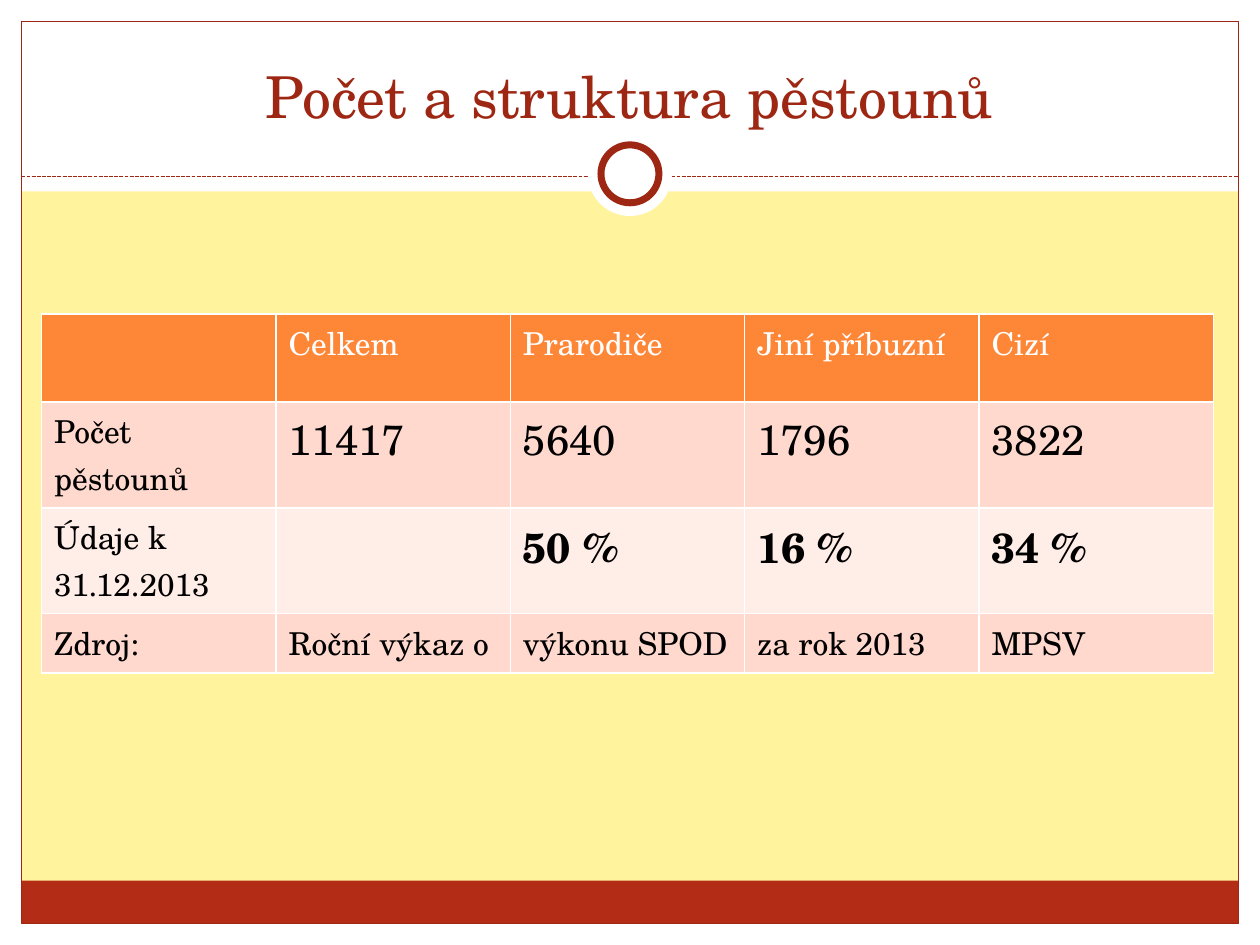
"""Build a slide with a table of foster carers by relation to the child."""
from lxml import etree
from pptx import Presentation
from pptx import util as u
from pptx.dml.color import RGBColor
from pptx.enum import dml, shapes, text
from pptx.oxml.ns import qn

FONT = "TeX Gyre Schola"
COLORS = {
    "background": "FFF39D",
    "white": "FFFFFF",
    "black": "000000",
    "footer": "B32C16",
    "accent": "9E2713",
    "header": "FE8637",
    "band_dark": "FFD9CE",
    "band_light": "FFEDE8",
}
ROWS = [
    ["", "Celkem", "Prarodiče", "Jiní příbuzní", "Cizí"],
    ["Počet pěstounů", "11417", "5640", "1796", "3822"],
    ["Údaje k 31.12.2013", "", "50 %", "16 %", "34 %"],
    ["Zdroj:", "Roční výkaz o", "výkonu SPOD", "za rok 2013", "MPSV"],
]
ROW_HEIGHTS = [0.7, 0.84, 0.84, 0.47]
ROW_FILLS = ["header", "band_dark", "band_light", "band_dark"]
COL_WIDTH = 1.86
MARGIN = 0.17


def rgb(name):
    return RGBColor.from_string(COLORS[name])


def fill_solid(target, name):
    target.fill.solid()
    target.fill.fore_color.rgb = rgb(name)


def add_block(s, box, fill=None, line=None, width=0.75, kind=shapes.MSO_SHAPE.RECTANGLE):
    sp = s.shapes.add_shape(kind, *map(u.Inches, box))
    sp.shadow.inherit = False
    if fill:
        fill_solid(sp, fill)
    else:
        sp.fill.background()
    if line:
        sp.line.color.rgb = rgb(line)
        sp.line.width = u.Pt(width)
    else:
        sp.line.fill.background()


def add_circle(s, center, size, **style):
    x, y = center
    box = (x - size / 2, y - size / 2, size, size)
    add_block(s, box, kind=shapes.MSO_SHAPE.OVAL, **style)


def add_dashed_line(s, x1, x2, y):
    line = s.shapes.add_connector(
        shapes.MSO_CONNECTOR.STRAIGHT, *map(u.Inches, (x1, y, x2, y)))
    line.line.color.rgb = rgb("accent")
    line.line.width = u.Pt(0.75)
    line.line.dash_style = dml.MSO_LINE.SQUARE_DOT
    etree.SubElement(line._element.spPr, qn("a:effectLst"))


def add_run(p, content, size, color, bold=False):
    r = p.add_run()
    r.text = content
    r.font.name = FONT
    r.font.size = u.Pt(size)
    r.font.bold = bold
    r.font.color.rgb = rgb(color)


def add_title(s, content):
    tf = s.shapes.add_textbox(*map(u.Inches, (0.33, 0.25, 9.33, 0.83))).text_frame
    tf.word_wrap = True
    tf.vertical_anchor = text.MSO_ANCHOR.BOTTOM
    p = tf.paragraphs[0]
    p.alignment = text.PP_ALIGN.CENTER
    add_run(p, content, 33, "accent")


def add_carer_table(s):
    cols = len(ROWS[0])
    box = (0.33, 2.49, COL_WIDTH * cols, sum(ROW_HEIGHTS))
    table = s.shapes.add_table(len(ROWS), cols, *map(u.Inches, box)).table
    for column in table.columns:
        column.width = u.Inches(COL_WIDTH)
    for i, row in enumerate(ROWS):
        table.rows[i].height = u.Inches(ROW_HEIGHTS[i])
        for j, content in enumerate(row):
            cell = table.cell(i, j)
            fill_solid(cell, ROW_FILLS[i])
            if content:
                is_figure = i in (1, 2) and j > 0
                add_run(cell.text_frame.paragraphs[0], content,
                        24 if is_figure else 18,
                        "black" if i else "white",
                        bold=is_figure and i == 2)


def add_frame(s):
    right = 10 - MARGIN
    bottom = 7.5 - MARGIN
    inner = right - MARGIN
    for box in [(0, bottom, 10, MARGIN), (0, 0, 10, 1.52),
                (0, 0, MARGIN, 7.5), (right, 0, MARGIN, 7.5)]:
        add_block(s, box, fill="white")
    add_block(s, (MARGIN, 6.99, inner, 0.34), fill="footer")
    add_block(s, (MARGIN, MARGIN, inner, bottom - MARGIN), line="accent")
    add_dashed_line(s, MARGIN, right, 1.4)
    center = (5, 1.38)
    add_circle(s, center, 0.67, fill="white")
    add_circle(s, center, 0.46, fill="white", line="accent", width=4)


def main():
    prs = Presentation()
    prs.slide_width, prs.slide_height = u.Inches(10), u.Inches(7.5)
    s = prs.slides.add_slide(prs.slide_layouts[6])
    fill_solid(s.background, "background")
    add_frame(s)
    add_title(s, "Počet a struktura pěstounů")
    add_carer_table(s)
    prs.save("out.pptx")


if __name__ == "__main__":
    main()
